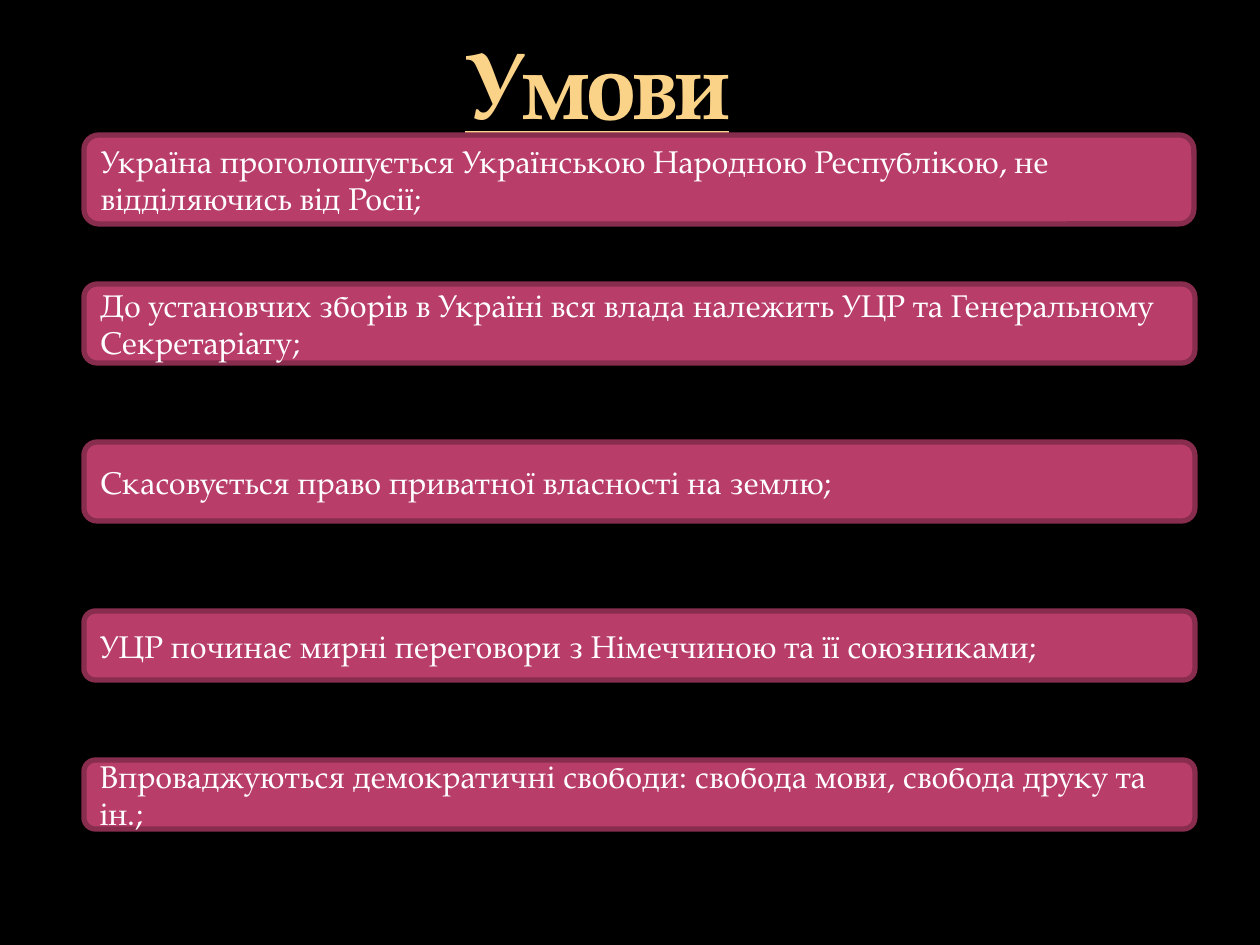
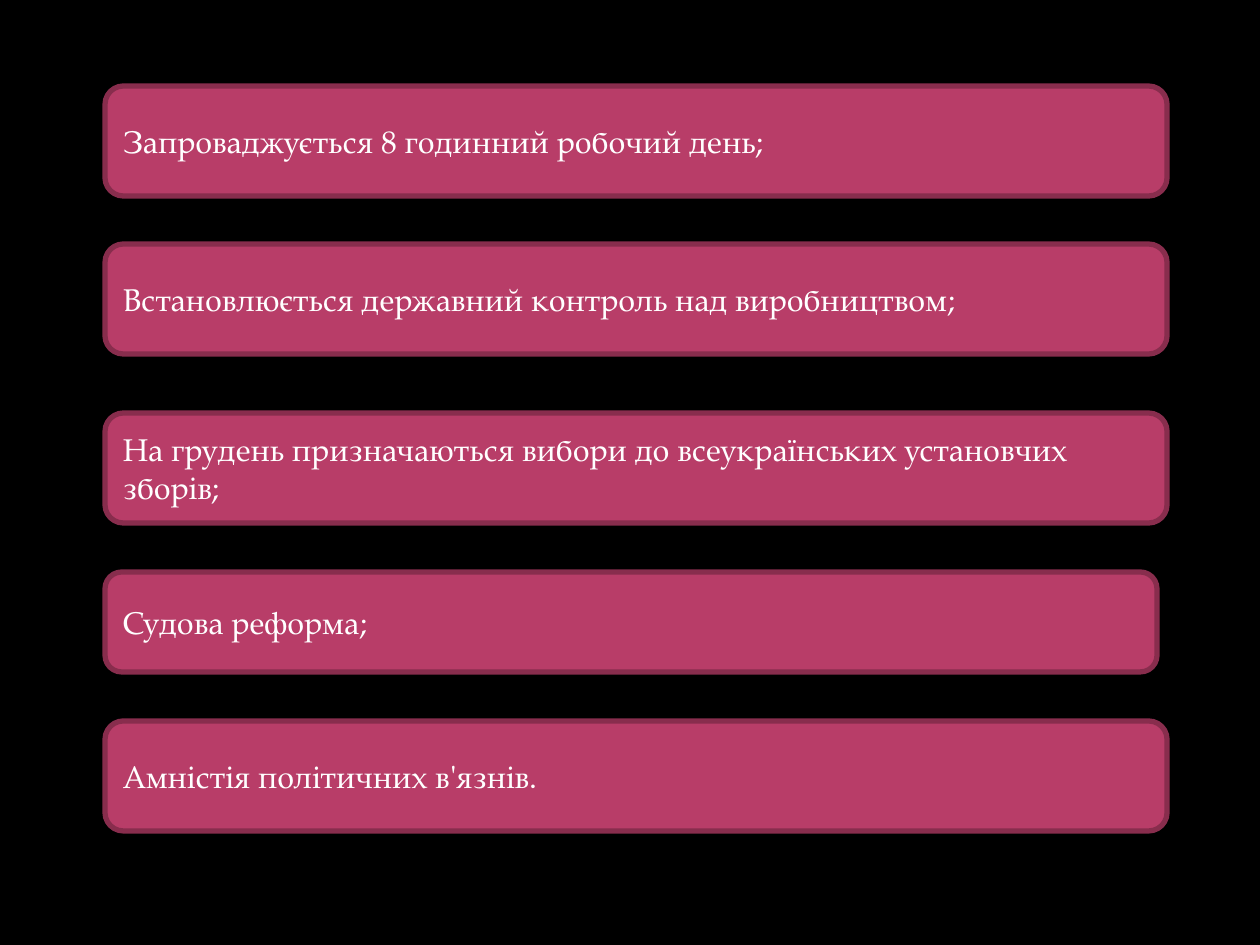
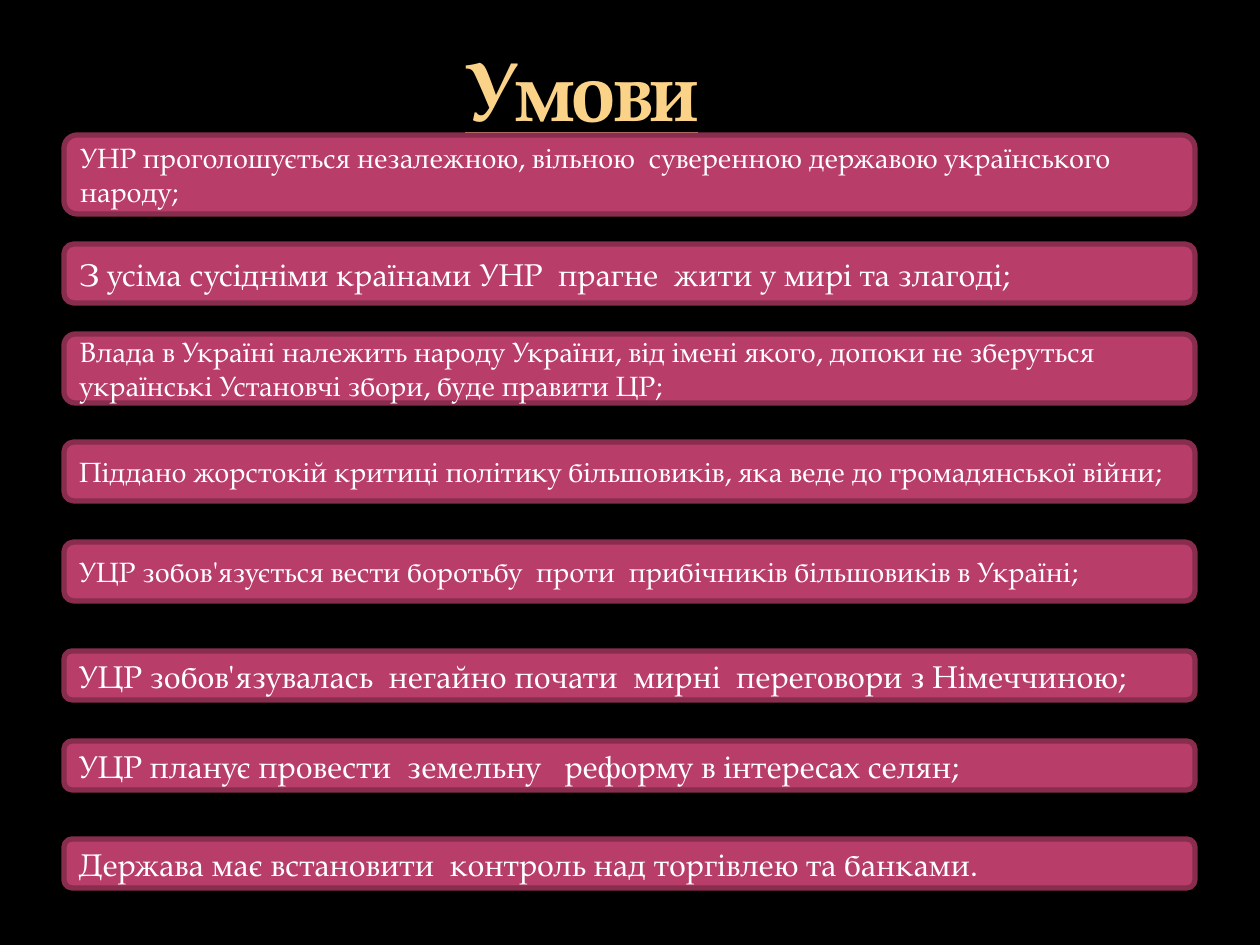
from lxml.etree import SubElement
from pptx import Presentation
from pptx.dml.color import RGBColor
from pptx.enum.shapes import MSO_SHAPE as Preset
from pptx.enum.text import MSO_ANCHOR as Anchor, PP_ALIGN as Align
from pptx.oxml.ns import qn
from pptx.util import Emu, Pt

PX_PER_INCH = 126
FONT = "TeX Gyre Pagella"
COLOURS = {
    "background": "000000",
    "title": "FBD388",
    "title_outline": "9C3888",
    "bar": "B83D68",
    "bar_line": "882D4D",
    "bar_text": "FFFFFF",
}

FIRST_TERMS = [
    (135, 1110, 89, 18, "Україна проголошується Українською Народною Республікою, не відділяючись від Росії;"),
    (284, 1111, 79, 18, "До установчих зборів в Україні вся влада належить УЦР та Генеральному Секретаріату;"),
    (442, 1111, 79, 18, "Скасовується право приватної власності на землю;"),
    (611, 1111, 69, 18, "УЦР починає мирні переговори з Німеччиною та її союзниками;"),
    (760, 1111, 69, 18, "Впроваджуються демократичні свободи: свобода мови, свобода друку та ін.;"),
]
REFORMS = [
    (86, 1062, 110, 18, "Запроваджується 8 годинний робочий день;"),
    (244, 1062, 110, 18, "Встановлюється державний контроль над виробництвом;"),
    (413, 1062, 110, 18, "На грудень призначаються вибори до всеукраїнських установчих зборів;"),
    (572, 1052, 100, 18, "Судова реформа;"),
    (721, 1062, 110, 18, "Амністія політичних в'язнів."),
]
INDEPENDENCE_TERMS = [
    (135, 1131, 79, 16, "УНР проголошується незалежною, вільною  суверенною державою українського народу;"),
    (244, 1131, 59, 18, "З усіма сусідніми країнами УНР  прагне  жити у мирі та злагоді;"),
    (334, 1131, 69, 16, "Влада в Україні належить народу України, від імені якого, допоки не зберуться українські Установчі збори, буде правити ЦР;"),
    (442, 1131, 59, 16, "Піддано жорстокій критиці політику більшовиків, яка веде до громадянської війни;"),
    (542, 1131, 59, 16, "УЦР зобов'язується вести боротьбу  проти  прибічників більшовиків в Україні;"),
    (651, 1131, 49, 18, "УЦР зобов'язувалась  негайно почати  мирні  переговори з Німеччиною;"),
    (741, 1131, 49, 18, "УЦР планує провести  земельну   реформу в інтересах селян;"),
    (839, 1131, 49, 18, "Держава має встановити  контроль над торгівлею та банками."),
]


def px(length):
    return Emu(round(length * 914400 / PX_PER_INCH))


def colour(name):
    return RGBColor.from_string(COLOURS[name])


def add_page(deck):
    page = deck.slides.add_slide(deck.slide_layouts[6])
    page.background.fill.solid()
    page.background.fill.fore_color.rgb = colour("background")
    return page


def add_span(para, text, size, colour_name):
    span = para.add_run()
    span.text = text
    span.font.name = FONT
    span.font.size = Pt(size)
    span.font.color.rgb = colour(colour_name)
    return span


def outline_span(span):
    properties = span.font._element
    line = SubElement(properties, qn("a:ln"), w="3175")
    properties.insert(0, line)
    fill = SubElement(line, qn("a:solidFill"))
    tint = SubElement(fill, qn("a:srgbClr"), val=COLOURS["title_outline"])
    SubElement(tint, qn("a:alpha"), val="25000")
    SubElement(line, qn("a:prstDash"), val="solid")


def add_title(page, text, size):
    box = page.shapes.add_textbox(px(74), px(55), px(1134), px(168))
    frame = box.text_frame
    frame.word_wrap = True
    frame.vertical_anchor = Anchor.BOTTOM
    frame.margin_left = px(391)
    frame.margin_bottom = px(85)
    span = add_span(frame.paragraphs[0], text, size, "title")
    span.font.bold = True
    span.font.underline = True
    span.font._element.set("spc", "-100")
    outline_span(span)


def add_bar(page, left, top, width, height, size, text):
    bar = page.shapes.add_shape(Preset.ROUNDED_RECTANGLE, px(left), px(top), px(width), px(height))
    bar.shadow.inherit = False
    bar.fill.solid()
    bar.fill.fore_color.rgb = colour("bar")
    bar.line.color.rgb = colour("bar_line")
    bar.line.width = Pt(3)
    frame = bar.text_frame
    frame.word_wrap = True
    frame.vertical_anchor = Anchor.MIDDLE
    para = frame.paragraphs[0]
    para.alignment = Align.LEFT
    add_span(para, text, size, "bar_text")


def add_bars(page, left, bars):
    for top, width, height, size, text in bars:
        add_bar(page, left, top, width, height, size, text)


def main():
    deck = Presentation()
    deck.slide_width, deck.slide_height = px(1260), px(945)

    page = add_page(deck)
    add_title(page, "Умови", 54)
    add_bars(page, 84, FIRST_TERMS)

    page = add_page(deck)
    add_bars(page, 105, REFORMS)

    page = add_page(deck)
    add_title(page, "Умови", 47.7)
    add_bars(page, 64, INDEPENDENCE_TERMS)

    deck.save("out.pptx")


if __name__ == "__main__":
    main()
